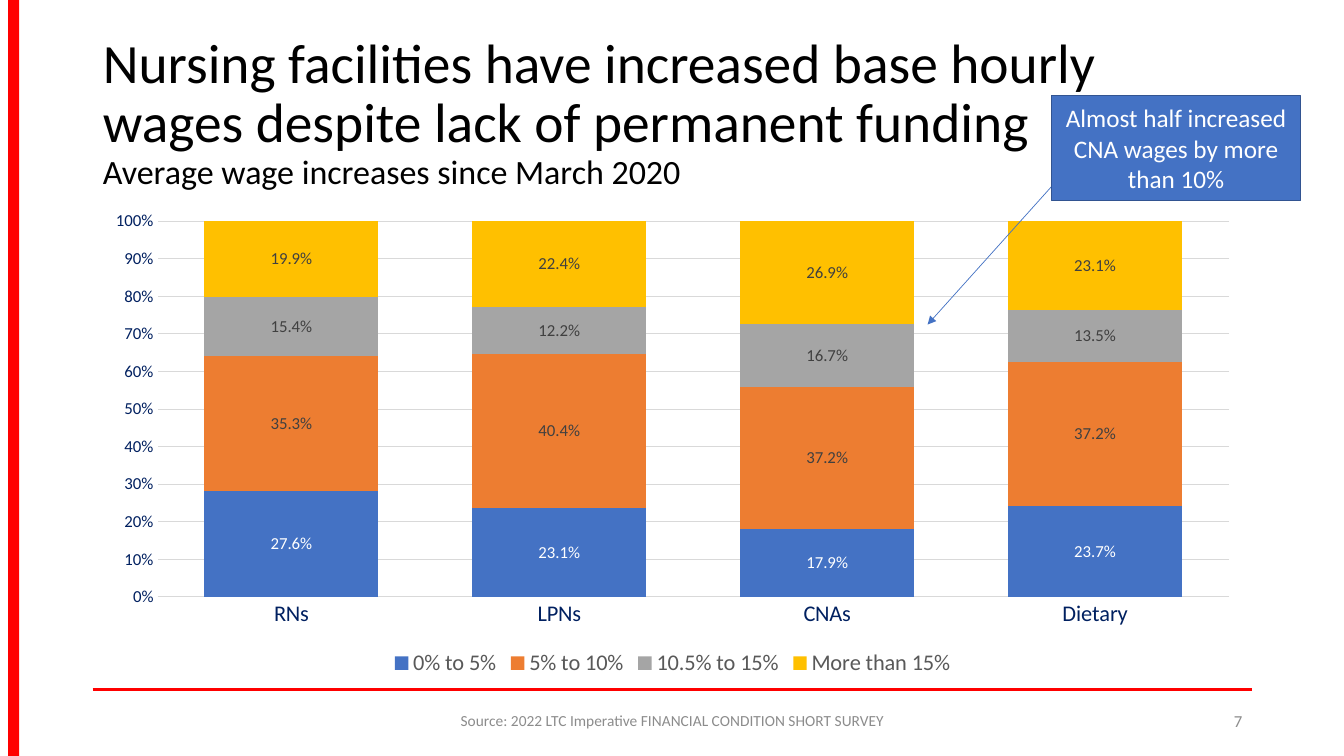
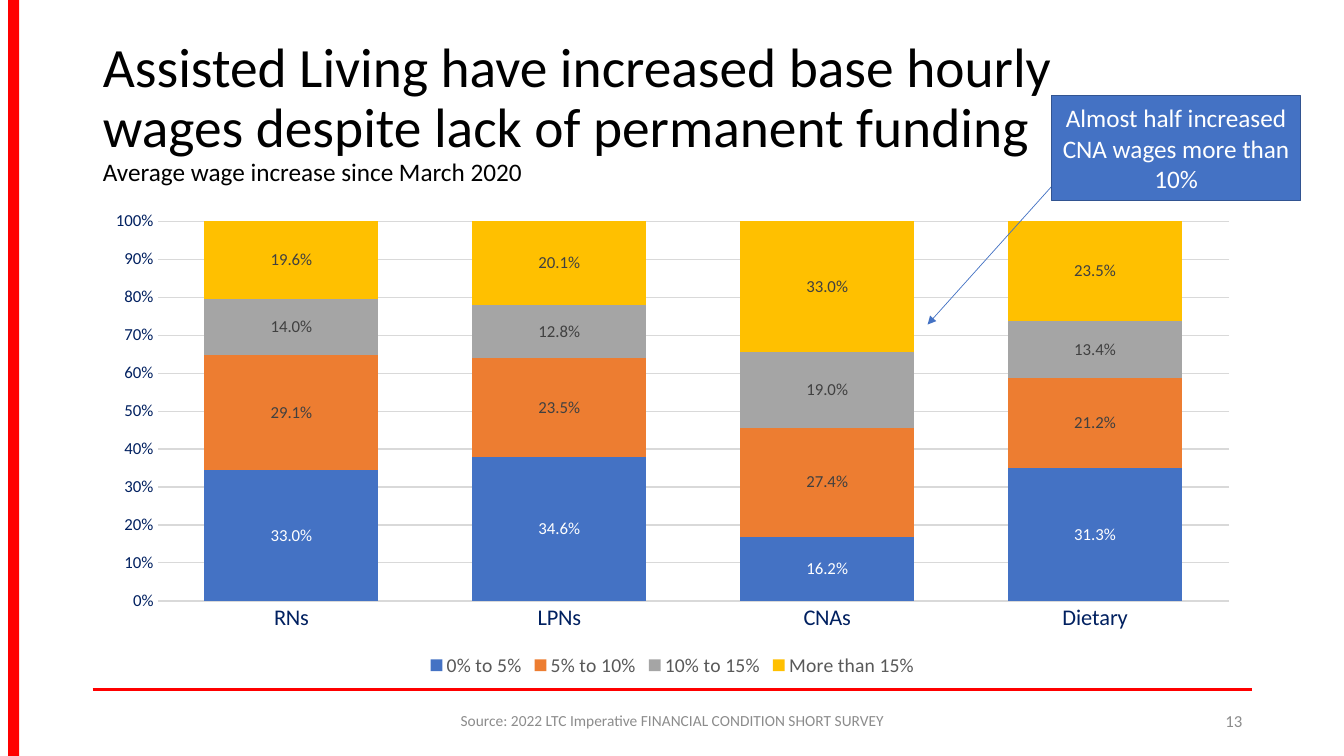
import pptx
import pptx.util
import pptx.chart.data
import pptx.dml.color
import pptx.enum.chart
import pptx.enum.shapes
import pptx.enum.text
from dataclasses import dataclass
from lxml import etree
from pptx.enum.chart import XL_LEGEND_POSITION, XL_TICK_MARK
from pptx.enum.text import MSO_ANCHOR, PP_ALIGN
from pptx.util import Inches, Pt

CATEGORIES = ["RNs", "LPNs", "CNAs", "Dietary"]
SOURCE = "Source: 2022 LTC Imperative FINANCIAL CONDITION SHORT SURVEY"
SLIDES = [
    {
        "title": "Nursing facilities have increased base hourly wages despite lack of permanent funding",
        "subtitle": "Average wage increases since March 2020",
        "subtitle_size": 24.3,
        "title_width": 11.5,
        "callout": "Almost half increased CNA wages by more than 10%",
        "legend_size": 16,
        "page": "7",
        "series": [
            ("0% to 5%", (0.276, 0.231, 0.179, 0.237)),
            ("5% to 10%", (0.353, 0.404, 0.372, 0.372)),
            ("10.5% to 15%", (0.154, 0.122, 0.167, 0.135)),
            ("More than 15%", (0.199, 0.224, 0.269, 0.231)),
        ],
    },
    {
        "title": "Assisted Living have increased base hourly wages despite lack of permanent funding",
        "subtitle": "Average wage increase since March 2020",
        "subtitle_size": 18,
        "title_width": 10.22,
        "callout": "Almost half increased CNA wages more than 10%",
        "legend_size": 14,
        "page": "13",
        "series": [
            ("0% to 5%", (0.33, 0.346, 0.162, 0.313)),
            ("5% to 10%", (0.291, 0.235, 0.274, 0.212)),
            ("10% to 15%", (0.14, 0.128, 0.19, 0.134)),
            ("More than 15%", (0.196, 0.201, 0.33, 0.235)),
        ],
    },
]


@dataclass(frozen=True)
class Theme:
    font: str = "Calibri"
    black: str = "000000"
    white: str = "FFFFFF"
    red: str = "FF0000"
    blue: str = "4472C4"
    blue_edge: str = "325491"
    navy: str = "002060"
    grid: str = "D9D9D9"
    legend: str = "595959"
    label: str = "404040"
    footer: str = "8C8C8C"
    series: tuple = ("4472C4", "ED7D31", "A5A5A5", "FFC000")
    title_size: float = 39.6
    callout_size: float = 18
    category_size: float = 16
    small_size: float = 12
    source_size: float = 11


T = Theme()
LEFT, WIDTH = 0.92, 11.5
FOOTER_TOP, FOOTER_HEIGHT = 6.95, 0.4


def rgb(value):
    return pptx.dml.color.RGBColor.from_string(value)


def set_font(font, size, color):
    font.name = T.font
    font.size = Pt(size)
    font.color.rgb = rgb(color)


def set_line(line, color, width):
    line.color.rgb = rgb(color)
    line.width = Pt(width)


def add_line(s, start, end, color, width, arrow=False):
    points = [Inches(v) for v in (*start, *end)]
    line = s.shapes.add_connector(pptx.enum.shapes.MSO_CONNECTOR.STRAIGHT, *points)
    set_line(line.line, color, width)
    if arrow:
        ln = line.line._get_or_add_ln()
        etree.SubElement(ln, pptx.oxml.ns.qn("a:tailEnd"), type="triangle")
    etree.SubElement(line._element.spPr, pptx.oxml.ns.qn("a:effectLst"))


def add_rect(s, box, fill):
    sp = s.shapes.add_shape(pptx.enum.shapes.MSO_SHAPE.RECTANGLE, *map(Inches, box))
    sp.shadow.inherit = False
    sp.fill.solid()
    sp.fill.fore_color.rgb = rgb(fill)
    sp.line.fill.background()
    return sp


def write_text(sp, text, size, color, align):
    tf = sp.text_frame
    tf.word_wrap = True
    tf.vertical_anchor = MSO_ANCHOR.MIDDLE
    p = tf.paragraphs[0]
    p.text = text
    p.alignment = align
    set_font(p.font, size, color)


def add_frame(s, page):
    add_line(s, (LEFT, 6.84), (LEFT + WIDTH, 6.84), T.red, 2)
    add_rect(s, (0.08, 0, 0.11, 7.5), T.red)
    footers = [
        (4.42, 4.5, SOURCE, T.source_size, PP_ALIGN.CENTER),
        (9.42, 3, page, T.small_size, PP_ALIGN.RIGHT),
    ]
    for left, width, text, size, align in footers:
        box = map(Inches, (left, FOOTER_TOP, width, FOOTER_HEIGHT))
        write_text(s.shapes.add_textbox(*box), text, size, T.footer, align)


def set_title(s, data):
    sp = s.shapes.title
    sp.left, sp.top, sp.width, sp.height = map(Inches, (LEFT, 0.4, data["title_width"], 1.45))
    tf = sp.text_frame
    tf.word_wrap = True
    tf.auto_size = pptx.enum.text.MSO_AUTO_SIZE.NONE
    tf.vertical_anchor = MSO_ANCHOR.MIDDLE
    p = tf.paragraphs[0]
    p.alignment = PP_ALIGN.LEFT
    p.line_spacing = 0.9
    set_font(p.font, T.title_size, T.black)
    p.add_run().text = data["title"]
    p.add_line_break()
    r = p.add_run()
    r.text = data["subtitle"]
    r.font.size = Pt(data["subtitle_size"])


def add_wage_chart(s, data):
    chart_data = pptx.chart.data.CategoryChartData(number_format="0.0%")
    chart_data.categories = CATEGORIES
    for name, values in data["series"]:
        chart_data.add_series(name, values)
    box = map(Inches, (LEFT, 2, WIDTH, 4.76))
    kind = pptx.enum.chart.XL_CHART_TYPE.COLUMN_STACKED_100
    chart = s.shapes.add_chart(kind, *box, chart_data).chart
    chart.has_title = False
    set_font(chart.font, 10, T.black)

    chart.has_legend = True
    chart.legend.position = XL_LEGEND_POSITION.BOTTOM
    chart.legend.include_in_layout = False
    set_font(chart.legend.font, data["legend_size"], T.legend)

    cat, val = chart.category_axis, chart.value_axis
    for axis, size in ((cat, T.category_size), (val, T.small_size)):
        axis.major_tick_mark = axis.minor_tick_mark = XL_TICK_MARK.NONE
        set_font(axis.tick_labels.font, size, T.navy)
    set_line(cat.format.line, T.grid, 0.75)
    val.format.line.fill.background()
    val.minimum_scale, val.maximum_scale, val.major_unit = 0, 1, 0.1
    val.tick_labels.number_format = "0%"
    val.tick_labels.number_format_is_linked = False
    set_line(val.major_gridlines.format.line, T.grid, 0.75)

    plot = chart.plots[0]
    plot.gap_width, plot.overlap = 54, 100
    plot.vary_by_categories = False
    for series, color in zip(plot.series, T.series):
        series.format.fill.solid()
        series.format.fill.fore_color.rgb = rgb(color)
        labels = series.data_labels
        labels.show_value = True
        labels.number_format = "0.0%"
        labels.number_format_is_linked = False
        set_font(labels.font, T.small_size, T.white if color == T.blue else T.label)


def add_callout(s, text):
    add_line(s, (10.43, 1.85), (9.2, 3.22), T.blue, 0.5, arrow=True)
    sp = add_rect(s, (10.43, 0.95, 2.47, 1.04), T.blue)
    set_line(sp.line, T.blue_edge, 1)
    write_text(sp, text, T.callout_size, T.white, PP_ALIGN.CENTER)


def main():
    prs = pptx.Presentation()
    prs.slide_width, prs.slide_height = Inches(13.33), Inches(7.5)
    for data in SLIDES:
        s = prs.slides.add_slide(prs.slide_layouts.get_by_name("Title Only"))
        add_frame(s, data["page"])
        set_title(s, data)
        add_wage_chart(s, data)
        add_callout(s, data["callout"])
    prs.save("out.pptx")


if __name__ == "__main__":
    main()
